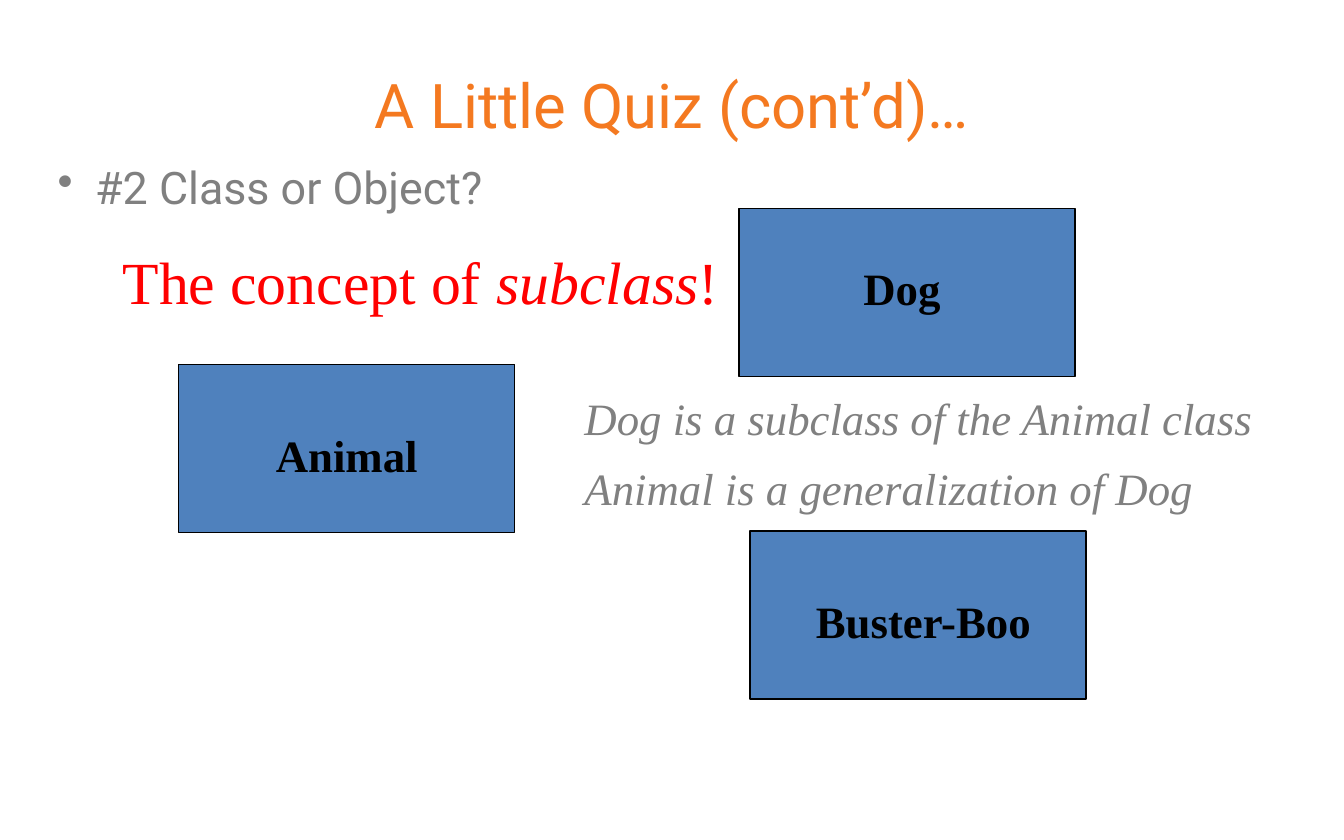
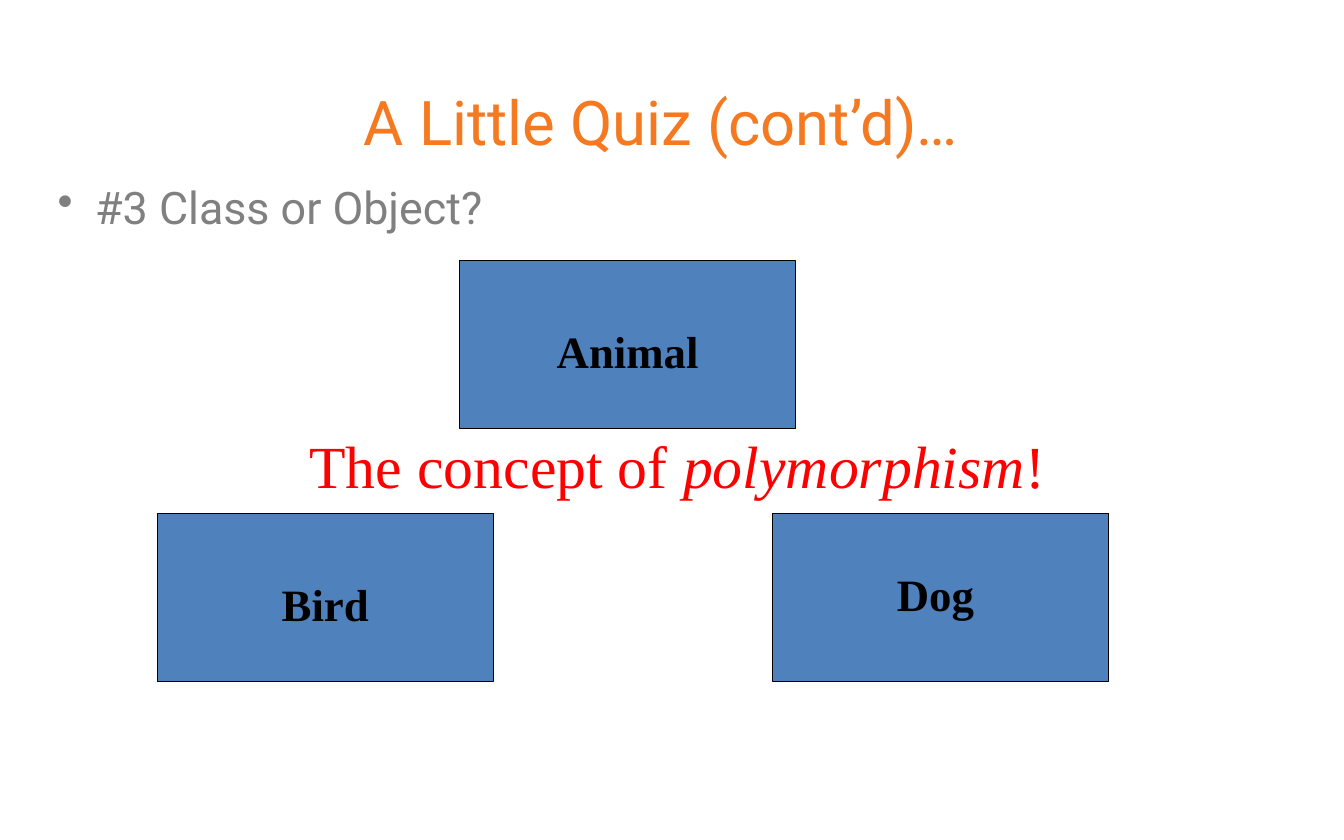
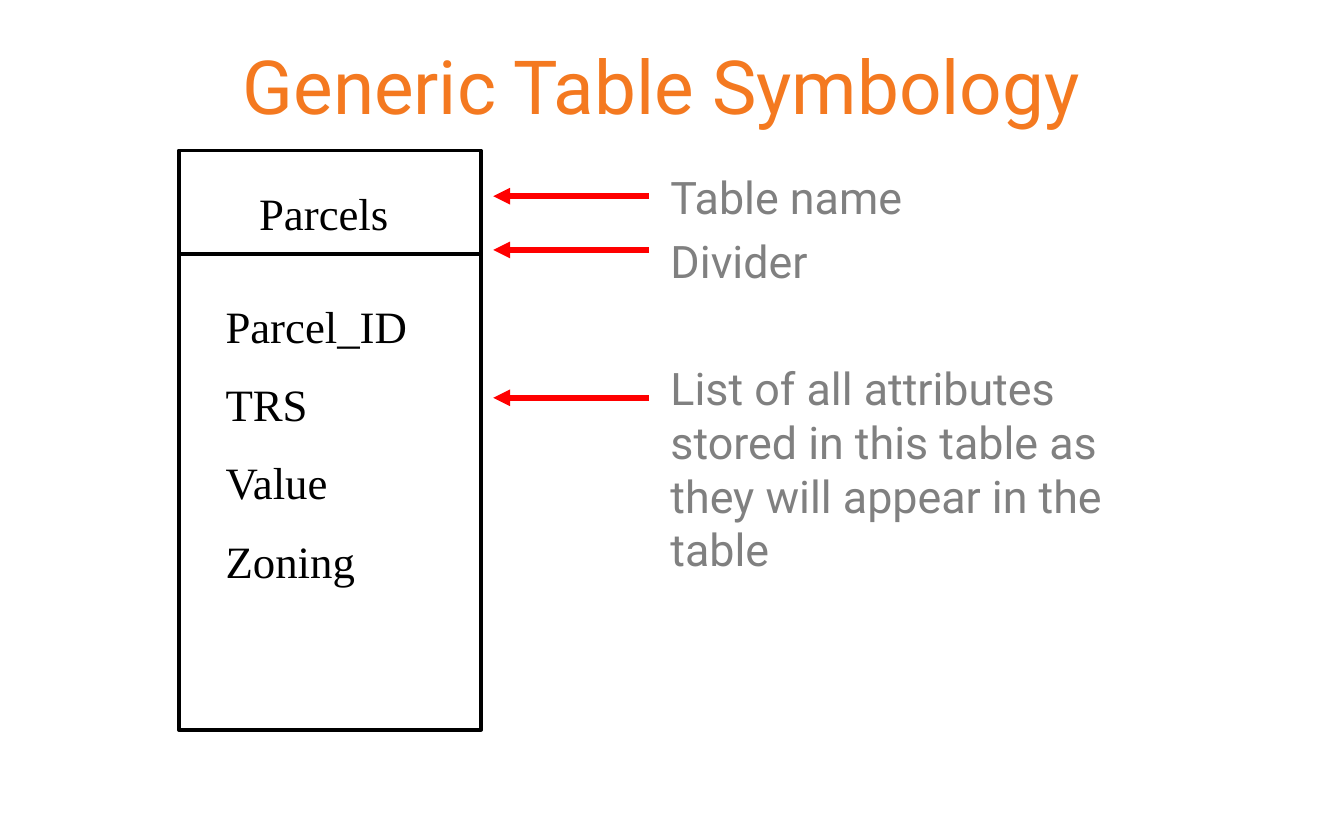
"""Build three slides on classes, subclasses and table symbology."""
import pptx
import pptx.util
import pptx.dml.color
import pptx.enum.shapes
import pptx.enum.text
import pptx.oxml.ns
from lxml import etree

Inches = pptx.util.Inches
Pt = pptx.util.Pt
RGBColor = pptx.dml.color.RGBColor
SHAPE = pptx.enum.shapes.MSO_SHAPE
ALIGN = pptx.enum.text.PP_ALIGN
ANCHOR = pptx.enum.text.MSO_ANCHOR
AUTO_SIZE = pptx.enum.text.MSO_AUTO_SIZE
qn = pptx.oxml.ns.qn

ORANGE = RGBColor(0xF4, 0x79, 0x20)
GRAY = RGBColor(0x80, 0x80, 0x80)
BLUE = RGBColor(0x4F, 0x81, 0xBD)
RED = RGBColor(0xFF, 0x00, 0x00)
BLACK = RGBColor(0x00, 0x00, 0x00)
WHITE = RGBColor(0xFF, 0xFF, 0xFF)

SANS = "Roboto"
SERIF = "Times New Roman"
BOX_W, BOX_H = 2.5, 1.25


def place(shape, left, top, width, height):
    """Set the position and size of a shape in inches."""
    shape.left, shape.top = Inches(left), Inches(top)
    shape.width, shape.height = Inches(width), Inches(height)


def fill_text(tf, lines, font=SERIF, size=24, color=BLACK, bold=False,
              align=ALIGN.LEFT, before=(), bullet=None):
    """Write one paragraph a line, with the parts between asterisks in italics."""
    for i, line in enumerate(lines):
        p = tf.paragraphs[0] if i == 0 else tf.add_paragraph()
        p.alignment = align
        p.space_before = Pt(before[i - 1] if i else 0)
        if bullet:
            pPr = p._p.get_or_add_pPr()
            pPr.set("marL", str(Inches(0.28)))
            pPr.set("indent", str(-Inches(0.28)))
            etree.SubElement(pPr, qn("a:buChar")).set("char", bullet)
        for n, part in enumerate(line.split("*")):
            if part:
                r = p.add_run()
                r.text = part
                r.font.name, r.font.size = font, Pt(size)
                r.font.bold, r.font.italic = bold, n % 2 == 1
                r.font.color.rgb = color


def add_text(shapes, at, *lines, grow=True, **style):
    """Add a wrapping text box."""
    sp = shapes.add_textbox(*map(Inches, at))
    tf = sp.text_frame
    tf.word_wrap = True
    tf.auto_size = AUTO_SIZE.SHAPE_TO_FIT_TEXT if grow else AUTO_SIZE.NONE
    fill_text(tf, lines, **style)


def add_body(s, at, *lines, **style):
    """Add the main gray text of a slide."""
    add_text(s.shapes, at, *lines, grow=False, font=SANS, color=GRAY, **style)


def add_concept(s, at, line):
    """Add the large red statement of a concept."""
    add_text(s.shapes, at, line, size=32, color=RED, align=ALIGN.CENTER)


def add_slide(prs, title, at, size=33):
    """Add a title-only slide with its orange title."""
    s = prs.slides.add_slide(prs.slide_layouts[5])
    place(s.shapes.title, *at)
    tf = s.shapes.title.text_frame
    tf.word_wrap = True
    tf.auto_size = AUTO_SIZE.NONE
    tf.vertical_anchor = ANCHOR.MIDDLE
    fill_text(tf, [title], font=SANS, size=size, color=ORANGE, align=ALIGN.CENTER)
    return s


def add_box(shapes, kind, at, fill, line_width):
    """Add a filled shape with a black outline."""
    sp = shapes.add_shape(kind, *map(Inches, at))
    sp.shadow.inherit = False
    sp.fill.solid()
    sp.fill.fore_color.rgb = fill
    sp.line.color.rgb = BLACK
    sp.line.width = Pt(line_width)


def add_class(s, name, left, top, label_w, dx=0, dy=0.42):
    """Add a class box grouped with its label, shifted dx from the centre."""
    shapes = s.shapes.add_group_shape().shapes
    add_box(shapes, SHAPE.FLOWCHART_PROCESS, (left, top, BOX_W, BOX_H), BLUE, 0.75)
    label_left = left + (BOX_W - label_w) / 2 + dx
    add_text(shapes, (label_left, top + dy, label_w, 0.5), name,
             bold=True, align=ALIGN.CENTER)


def add_line(shapes, x1, x2, y, color, width, arrow=False):
    """Add a horizontal line, with an arrowhead at its end if asked."""
    c = shapes.add_connector(pptx.enum.shapes.MSO_CONNECTOR.STRAIGHT,
                             Inches(x1), Inches(y), Inches(x2), Inches(y))
    c.line.color.rgb = color
    c.line.width = Pt(width)
    if arrow:
        etree.SubElement(c.line._get_or_add_ln(), qn("a:tailEnd")).set("type", "triangle")
    etree.SubElement(c._element.spPr, qn("a:effectLst"))


def subclass_slide(prs):
    """Build the quiz slide on subclasses."""
    s = add_slide(prs, "A Little Quiz (cont’d)…", (0.5, 0.25, 9, 1.04))
    add_body(s, (0.33, 1.14, 9, 4.12), "#2 Class or Object?", bullet="•")
    add_class(s, "Dog", 5.5, 1.55, 1.58, dx=-0.04, dy=0.34)
    add_class(s, "Buster-Boo", 5.58, 3.95, 2.08, dx=0.04)
    add_class(s, "Animal", 1.33, 2.71, 1.33)
    add_concept(s, (0.67, 1.77, 4.92, 0.64), "The concept of *subclass*!")
    for top, line in ((2.86, "*Dog is a subclass of the Animal class*"),
                      (3.38, "*Animal is a generalization of Dog*")):
        add_text(s.shapes, (4.25, top, 5.58, 0.51), line, color=GRAY)


def polymorphism_slide(prs):
    """Build the quiz slide on polymorphism."""
    s = add_slide(prs, "A Little Quiz (cont’d)…", (0.67, 0.38, 8.5, 1.04))
    add_body(s, (0.33, 1.29, 8.5, 3.75), "#3 Class or Object?", bullet="•")
    add_class(s, "Animal", 3.42, 1.94, 1.33)
    add_class(s, "Dog", 5.75, 3.82, 1.58, dx=-0.04, dy=0.35)
    add_class(s, "Bird", 1.17, 3.82, 1.17)
    add_concept(s, (1.83, 3.14, 6.42, 0.64), "The concept of *polymorphism*!")


def symbology_slide(prs):
    """Build the slide that explains the parts of a table symbol."""
    s = add_slide(prs, "Generic Table Symbology", (0.42, 0.11, 9, 1.04), size=40)
    add_body(s, (4.89, 1.21, 3.75, 3.75), "Table name", "Divider",
             "List of all attributes stored in this table as they will appear in the table",
             before=(5.6, 39.4))
    for y in (1.86, 1.46, 2.96):
        add_line(s.shapes, 4.83, 3.67, y, RED, 3, arrow=True)
    shapes = s.shapes.add_group_shape().shapes
    add_box(shapes, SHAPE.RECTANGLE, (1.33, 1.12, 2.25, 4.31), WHITE, 2)
    add_line(shapes, 1.33, 3.58, 1.89, BLACK, 2)
    add_text(shapes, (1.83, 1.33, 1.33, 0.51), "Parcels")
    add_text(shapes, (1.58, 2.17, 1.83, 2.32), "Parcel_ID", "TRS", "Value", "Zoning",
             before=(13.2,) * 3)


def main():
    """Build and save the presentation."""
    prs = pptx.Presentation()
    prs.slide_width, prs.slide_height = Inches(10), Inches(6.25)
    subclass_slide(prs)
    polymorphism_slide(prs)
    symbology_slide(prs)
    prs.save("out.pptx")


if __name__ == "__main__":
    main()
